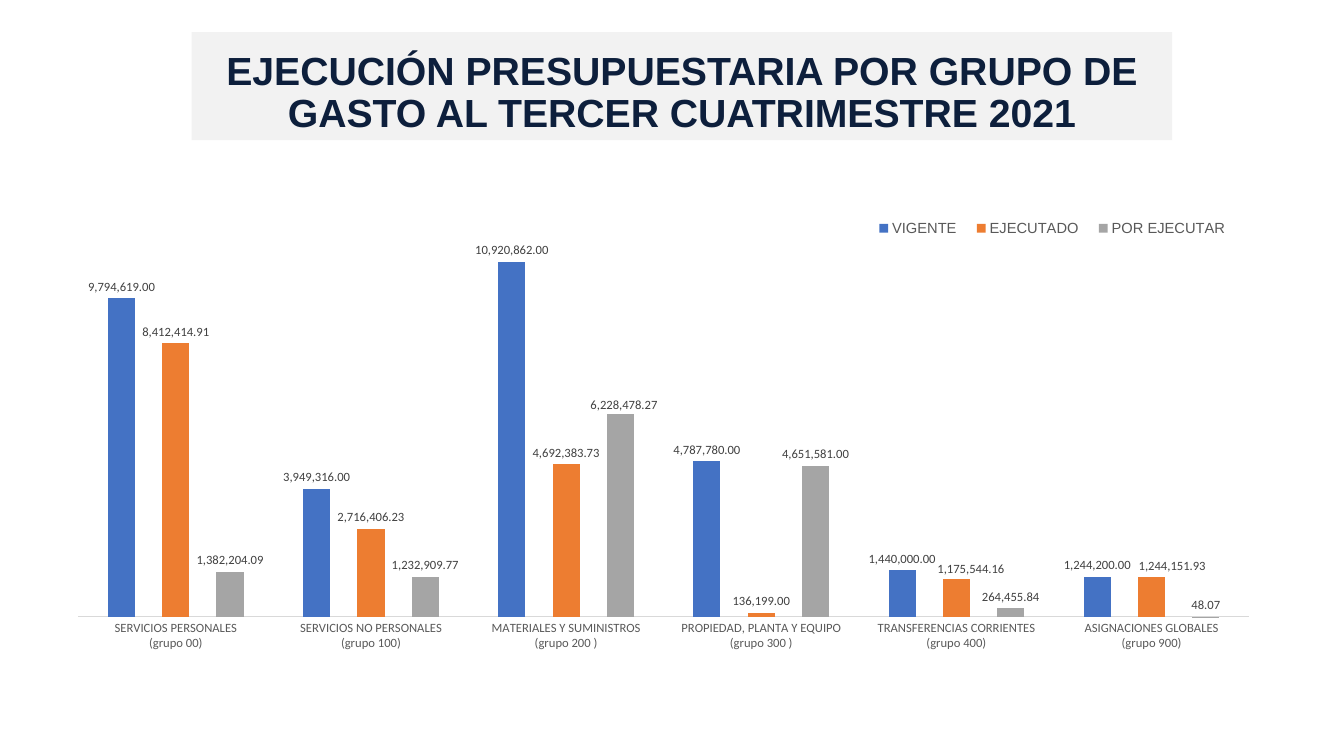
from lxml import etree
from pptx import Presentation, util as u
from pptx.chart.data import CategoryChartData
from pptx.dml.color import RGBColor
from pptx.enum import chart as charts, shapes, text
from pptx.oxml.ns import qn

COLORS = {
    "banner": "F2F2F2", "title": "0D1F3C", "text": "000000",
    "label": "404040", "axis": "595959", "line": "D9D9D9",
}
AMOUNT = "#,##0.00"
GROUPS = [
    "SERVICIOS PERSONALES\n(grupo 00)",
    "SERVICIOS NO PERSONALES\n(grupo 100)",
    "MATERIALES Y SUMINISTROS\n(grupo 200 )",
    "PROPIEDAD, PLANTA Y EQUIPO\n(grupo 300 )",
    "TRANSFERENCIAS CORRIENTES\n(grupo 400)",
    "ASIGNACIONES GLOBALES\n(grupo 900)",
]
# Name, color, values, and label shifts by group index
BUDGET = [
    ("VIGENTE", "4472C4",
     (9794619, 3949316, 10920862, 4787780, 1440000, 1244200), {}),
    ("EJECUTADO", "ED7D31",
     (8412414.91, 2716406.23, 4692383.73, 136199, 1175544.16, 1244151.93),
     {4: (0.012, 0.004), 5: (0.017, 0.002)}),
    ("POR EJECUTAR", "A5A5A5",
     (1382204.09, 1232909.77, 6228478.27, 4651581, 264455.84, 48.07),
     {2: (0.003, 0.004)}),
]


def style_font(font, size, color, name="Calibri", bold=False):
    font.name, font.size, font.bold = name, u.Pt(size), bold
    font.color.rgb = RGBColor.from_string(COLORS[color])


def write_text(frame, words, align=text.PP_ALIGN.CENTER, spacing=0.9, **style):
    para = frame.paragraphs[0]
    para.alignment, para.line_spacing = align, spacing
    span = para.add_run()
    span.text = words
    style_font(span.font, **style)


def manual_layout(**values):
    layout = etree.Element(qn("c:layout"))
    manual = etree.SubElement(layout, qn("c:manualLayout"))
    for tag, value in values.items():
        etree.SubElement(manual, qn(f"c:{tag}")).set("val", str(value))
    return layout


class BudgetSlide:
    def __init__(self, deck):
        self.page = deck.slides.add_slide(deck.slide_layouts[5])

    def title(self, words, left, top, width, height):
        box = self.page.shapes.title
        box.left, box.top, box.width, box.height = map(
            u.Cm, (left, top, width, height))
        frame = box.text_frame
        frame.word_wrap, frame.auto_size = True, text.MSO_AUTO_SIZE.NONE
        frame.vertical_anchor = text.MSO_ANCHOR.MIDDLE
        write_text(frame, words, size=28, color="title", name="Arial", bold=True)

    def banner(self, left, top, width, height):
        band = self.page.shapes.add_shape(
            shapes.MSO_SHAPE.RECTANGLE, *map(u.Cm, (left, top, width, height)))
        band.shadow.inherit = False
        band.fill.solid()
        band.fill.fore_color.rgb = RGBColor.from_string(COLORS["banner"])
        band.line.fill.background()
        # Send the band behind the title
        self.page.shapes.title.element.addprevious(band.element)

    def columns(self, left, top, width, height):
        data = CategoryChartData(number_format=AMOUNT)
        data.categories = GROUPS
        for name, _, values, _ in BUDGET:
            data.add_series(name, values)
        chart = self.page.shapes.add_chart(
            charts.XL_CHART_TYPE.COLUMN_CLUSTERED,
            *map(u.Cm, (left, top, width, height)), data).chart
        chart.has_title = False
        style_font(chart.font, 10, "text")
        plot = chart.plots[0]
        plot.gap_width, plot.overlap, plot.vary_by_categories = 219, -100, False
        for series, (_, color, _, shifts) in zip(plot.series, BUDGET):
            self.format_series(series, color, shifts)
        self.format_axes(chart)
        self.place_parts(chart)

    def format_series(self, series, color, shifts):
        series.format.fill.solid()
        series.format.fill.fore_color.rgb = RGBColor.from_string(color)
        series.invert_if_negative = False
        labels = series.data_labels
        labels.show_value = True
        labels.number_format, labels.number_format_is_linked = AMOUNT, False
        labels.position = charts.XL_LABEL_POSITION.OUTSIDE_END
        style_font(labels.font, 9, "label")
        for index, (x, y) in shifts.items():
            label = series.points[index].data_label
            label.position = charts.XL_LABEL_POSITION.OUTSIDE_END
            style_font(label.font, 9, "label")
        for node in labels._element.findall(qn("c:dLbl")):
            order = node.find(qn("c:idx"))
            x, y = shifts[int(order.get("val"))]
            order.addnext(manual_layout(x=x, y=y))

    def format_axes(self, chart):
        groups, amounts = chart.category_axis, chart.value_axis
        groups.major_tick_mark = charts.XL_TICK_MARK.NONE
        groups.format.line.color.rgb = RGBColor.from_string(COLORS["line"])
        groups.format.line.width = u.Pt(0.75)
        style_font(groups.tick_labels.font, 9, "axis")
        amounts.visible = amounts.has_major_gridlines = False
        amounts.minimum_scale, amounts.maximum_scale = 0, 12_000_000
        amounts.tick_labels.number_format = AMOUNT
        amounts.tick_labels.number_format_is_linked = False

    def place_parts(self, chart):
        chart.has_legend = True
        legend = chart.legend
        legend.position = charts.XL_LEGEND_POSITION.BOTTOM
        legend.include_in_layout = False
        style_font(legend.font, 10.5, "axis", name="Arial")
        area = chart.element.find(".//" + qn("c:plotArea"))
        key = chart.element.find(".//" + qn("c:legend"))
        for part in (area, key):
            for layout in part.findall(qn("c:layout")):
                part.remove(layout)
        area.insert(0, manual_layout(
            layoutTarget="inner", xMode="edge", yMode="edge",
            x=0.003, y=0.167, w=0.964, h=0.752))
        key.find(qn("c:legendPos")).addnext(manual_layout(
            xMode="edge", yMode="edge", x=0.65, y=0.14, w=0.31, h=0.06))


def main():
    deck = Presentation()
    deck.slide_width, deck.slide_height = u.Cm(33.87), u.Cm(19.05)
    slide = BudgetSlide(deck)
    # Heading
    slide.banner(4.83, 0.81, 24.71, 2.72)
    slide.title("EJECUCIÓN PRESUPUESTARIA POR GRUPO DE GASTO "
                "AL TERCER CUATRIMESTRE 2021", 4.98, 1.6, 24.41, 1.52)
    # Budget by spending group
    slide.columns(1.88, 3.53, 30.61, 13.08)
    deck.save("out.pptx")


if __name__ == "__main__":
    main()
